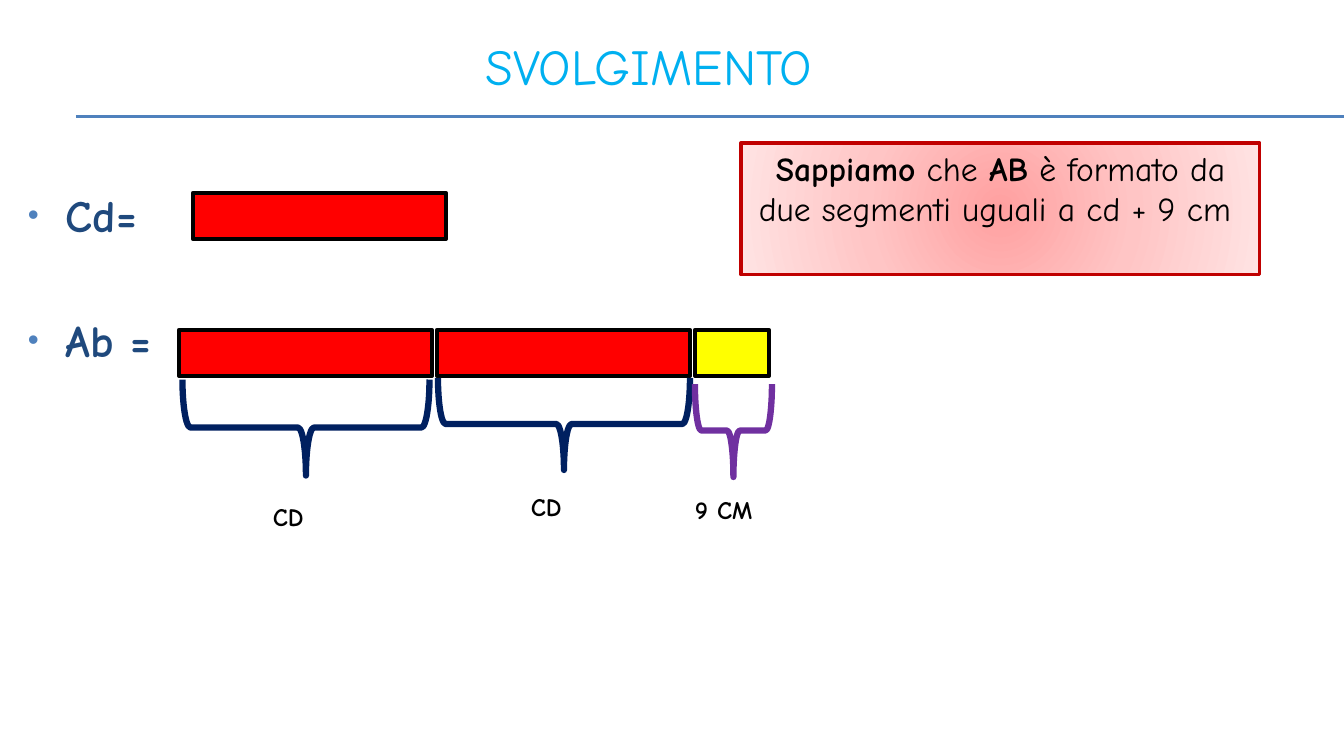
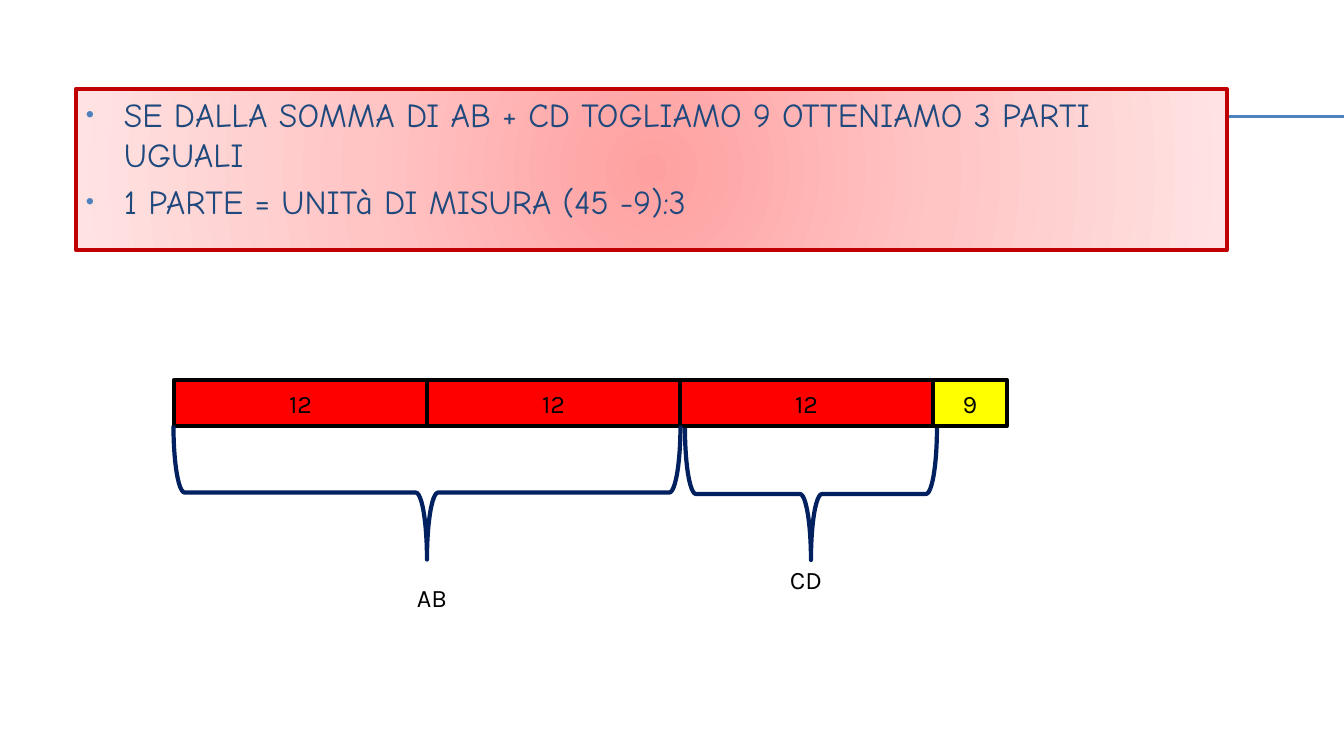
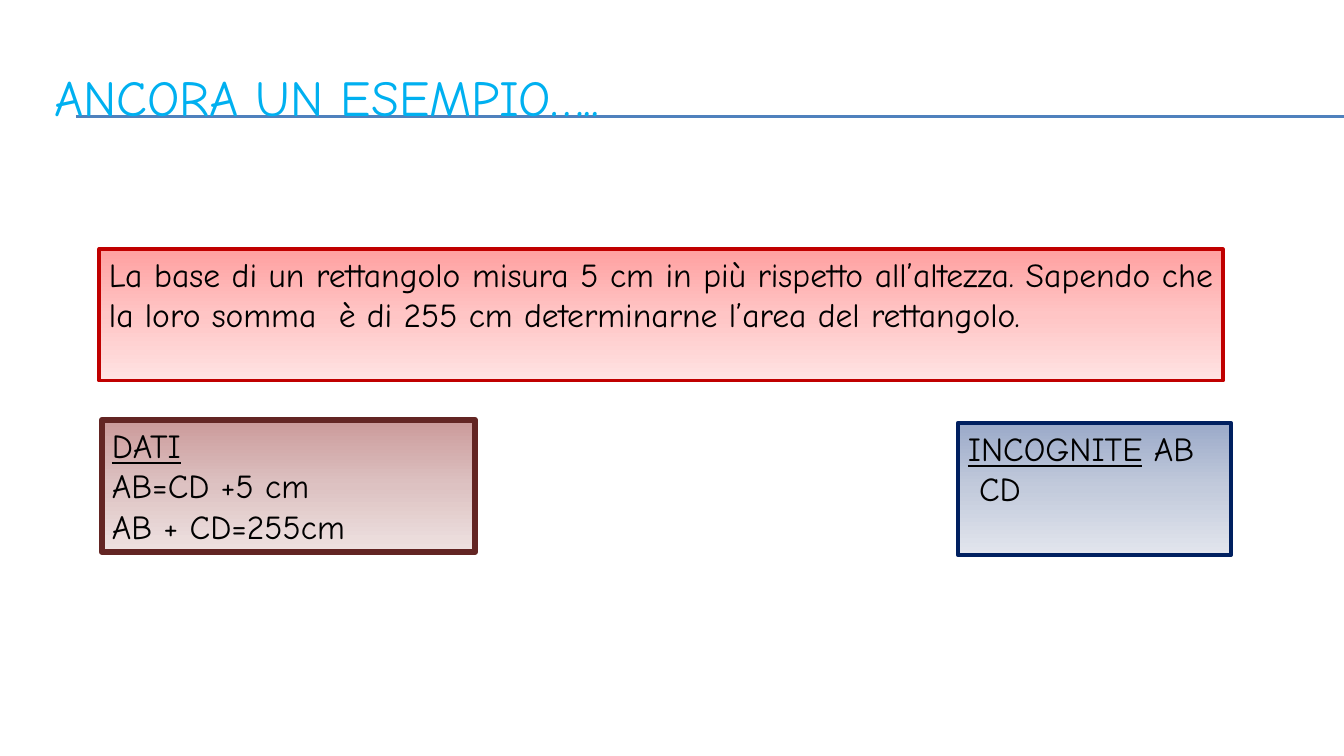
from pptx import Presentation
from pptx import util as u
from pptx.dml.color import RGBColor
from pptx.enum import shapes, text
from pptx.oxml import parse_xml
from pptx.oxml.ns import nsdecls, qn

EMU_PER_PX = 914400 / 100.8
FONT = "Comic Neue"
LABEL_FONT = "Karla"
BAR_W, BAR_H, REST_W = 253, 46, 74

COLORS = {
    "title": "00B0F0",
    "body": "1F497D",
    "rule": "4F81BD",
    "black": "000000",
    "segment": "FF0000",
    "rest": "FFFF00",
    "navy": "002060",
    "purple": "7030A0",
    "red": "C00000",
    "maroon": "632523",
}
GRADIENTS = {
    "red": ("FFA0A0", "FFC5C5", "FFE3E3"),
    "maroon": ("CB9A9A", "DDC2C2", "EEE2E1"),
    "navy": ("9BAAC9", "C3CBDC", "E2E5ED"),
}
LEFT, CENTER, JUSTIFY = (
    text.PP_ALIGN.LEFT, text.PP_ALIGN.CENTER, text.PP_ALIGN.JUSTIFY)


def px(length):
    return u.Emu(round(length * EMU_PER_PX))


def rgb(name):
    return RGBColor.from_string(COLORS[name])


def write(shape, paragraphs, size=18, color="black", font=FONT, bold=False,
          align=LEFT, anchor=text.MSO_ANCHOR.TOP, bullets=False, gap=0):
    frame = shape.text_frame
    frame.word_wrap = True
    frame.auto_size = text.MSO_AUTO_SIZE.NONE
    frame.vertical_anchor = anchor
    for index, runs in enumerate(paragraphs):
        paragraph = frame.add_paragraph() if index else frame.paragraphs[0]
        paragraph.alignment = align
        paragraph.space_before = u.Pt(gap if index else 0)
        if bullets:
            add_bullet(paragraph)
        for content, style in [(runs, "")] if isinstance(runs, str) else runs:
            run = paragraph.add_run()
            run.text = content
            run.font.name = font
            run.font.size = u.Pt(size)
            run.font.bold = bold or style == "bold"
            run.font.underline = style == "underline"
            run.font.color.rgb = rgb(color)


def add_bullet(paragraph):
    properties = paragraph._p.get_or_add_pPr()
    properties.set("marL", str(px(38)))
    properties.set("indent", str(px(-38)))
    for markup in (
        f'<a:buClr {nsdecls("a")}><a:srgbClr val="{COLORS["rule"]}"/></a:buClr>',
        f'<a:buSzPct {nsdecls("a")} val="70000"/>',
        f'<a:buFont {nsdecls("a")} typeface="Arial"/>',
        f'<a:buChar {nsdecls("a")} char="•"/>',
    ):
        properties.append(parse_xml(markup))


def add_title(slide, content, left, top, width, height, align):
    title = slide.shapes.title
    title.left, title.top = px(left), px(top)
    title.width, title.height = px(width), px(height)
    write(title, [content], size=36, color="title", align=align,
          anchor=text.MSO_ANCHOR.MIDDLE)


def add_text(slide, left, top, width, height, paragraphs, **style):
    box = slide.shapes.add_textbox(px(left), px(top), px(width), px(height))
    write(box, paragraphs, **style)


def add_outlined(slide, kind, left, top, width, height, line, weight):
    shape = slide.shapes.add_shape(
        kind, px(left), px(top), px(width), px(height))
    shape.shadow.inherit = False
    shape.fill.background()
    shape.line.color.rgb = rgb(line)
    shape.line.width = u.Pt(weight)
    return shape


def add_bar(slide, left, top, width=BAR_W, color="segment", label=None):
    bar = add_outlined(slide, shapes.MSO_SHAPE.RECTANGLE, left, top,
                       width, BAR_H, "black", 3)
    bar.fill.solid()
    bar.fill.fore_color.rgb = rgb(color)
    if label:
        write(bar, [label], font=LABEL_FONT, align=CENTER,
              anchor=text.MSO_ANCHOR.MIDDLE)


def add_bar_row(slide, left, top, pitch, labels):
    *segments, rest = labels
    for index, label in enumerate(segments):
        add_bar(slide, left + index * pitch, top, label=label)
    add_bar(slide, left + len(segments) * pitch, top, REST_W, "rest", rest)


def add_brace(slide, left, top, width, depth, color="navy", weight=3):
    inset = (width - depth) // 2
    brace = add_outlined(slide, shapes.MSO_SHAPE.LEFT_BRACE, left + inset,
                         top - inset, depth, width, color, weight)
    brace.rotation = 270


def add_panel(slide, left, top, width, height, paragraphs, tone="red",
              weight=2.25, radial=False, **style):
    panel = add_outlined(slide, shapes.MSO_SHAPE.RECTANGLE, left, top,
                         width, height, tone, weight)
    stops = "".join(
        f'<a:gs pos="{index * 50000}"><a:srgbClr val="{color}"/></a:gs>'
        for index, color in enumerate(GRADIENTS[tone]))
    direction = (
        '<a:path path="circle"><a:fillToRect l="50000" t="50000" '
        'r="50000" b="50000"/></a:path>'
        if radial else '<a:lin ang="5400000" scaled="0"/>')
    gradient = parse_xml(
        f'<a:gradFill {nsdecls("a")} rotWithShape="1">'
        f'<a:gsLst>{stops}</a:gsLst>{direction}</a:gradFill>')
    properties = panel.element.spPr
    properties.replace(properties.find(qn("a:noFill")), gradient)
    write(panel, paragraphs, size=24, **style)


def add_master_rules(master, slide):
    for index, y in enumerate((116, 117)):
        rule = slide.shapes.add_connector(
            shapes.MSO_CONNECTOR.STRAIGHT, px(76), px(y), px(1344), px(y))
        rule.line.color.rgb = rgb("rule")
        rule.line.width = u.Pt(0.75)
        rule.element.spPr.append(parse_xml(f'<a:effectLst {nsdecls("a")}/>'))
        rule.element.nvCxnSpPr.cNvPr.set("id", str(20 + index))
        master.shapes.element.append(rule.element)


def build_solution(slide):
    add_title(slide, "SVOLGIMENTO", 76, 0, 1146, 130, CENTER)
    add_text(slide, 18, 183, 1284, 478, ["Cd=", "Ab ="], size=32,
             color="body", bold=True, bullets=True, gap=51)
    add_bar(slide, 193, 193)
    add_bar_row(slide, 179, 330, 258, [None, None, None])
    add_brace(slide, 183, 379, 247, 96, weight=4.5)
    add_brace(slide, 438, 378, 252, 92, weight=4.5)
    add_brace(slide, 695, 384, 77, 93, "purple", 4.5)
    for left, top, label in (
            (263, 496, "CD"), (521, 486, "CD"), (685, 489, "9 CM")):
        add_text(slide, left, top, 87, 40, [label], bold=True)
    add_panel(slide, 741, 143, 519, 132, [[
        ("Sappiamo", "bold"), (" che ", ""), ("AB", "bold"),
        (" è formato da due segmenti uguali a cd + 9 cm ", "")]],
        radial=True, align=CENTER)


def build_unit(slide):
    add_panel(slide, 76, 89, 1151, 171 - 10, [
        "SE DALLA SOMMA DI AB + CD TOGLIAMO 9 OTTENIAMO 3 PARTI UGUALI",
        "1 PARTE = UNITà DI MISURA (45 -9):3"],
        weight=3, radial=True, color="body", bullets=True, gap=4.8)
    add_bar_row(slide, 174, 380, BAR_W, ["12", "12", "12", "9"])
    add_brace(slide, 174, 425, 507, 134)
    add_brace(slide, 685, 428, 252, 132)
    for left, top, label in ((407, 577, "AB"), (780, 559, "CD")):
        add_text(slide, left, top, 70, 40, [label], font=LABEL_FONT)


def build_example(slide):
    add_title(slide, "ANCORA UN ESEMPIO…..", 44, 50, 1277, 93, LEFT)
    add_panel(slide, 99, 249, 1124, 132, [
        "La base di un rettangolo misura 5 cm in più rispetto all’altezza. "
        "Sapendo che la loro somma  è di 255 cm determinarne l’area del "
        "rettangolo."], align=JUSTIFY)
    add_panel(slide, 102, 420, 373, 132, [
        [("DATI", "underline")], "AB=CD +5 cm", "AB + CD=255cm"],
        tone="maroon", weight=4.5)
    add_panel(slide, 958, 423, 273, 132, [
        [("INCOGNITE", "underline"), (" AB", "")], " CD"],
        tone="navy", weight=3)


def main():
    deck = Presentation()
    deck.slide_width, deck.slide_height = px(1344), px(756)
    title_only, blank = deck.slide_layouts[5], deck.slide_layouts[6]
    solution, unit, example = [
        deck.slides.add_slide(layout)
        for layout in (title_only, blank, title_only)]
    add_master_rules(deck.slide_master, solution)
    build_solution(solution)
    build_unit(unit)
    build_example(example)
    deck.save("out.pptx")


if __name__ == "__main__":
    main()
